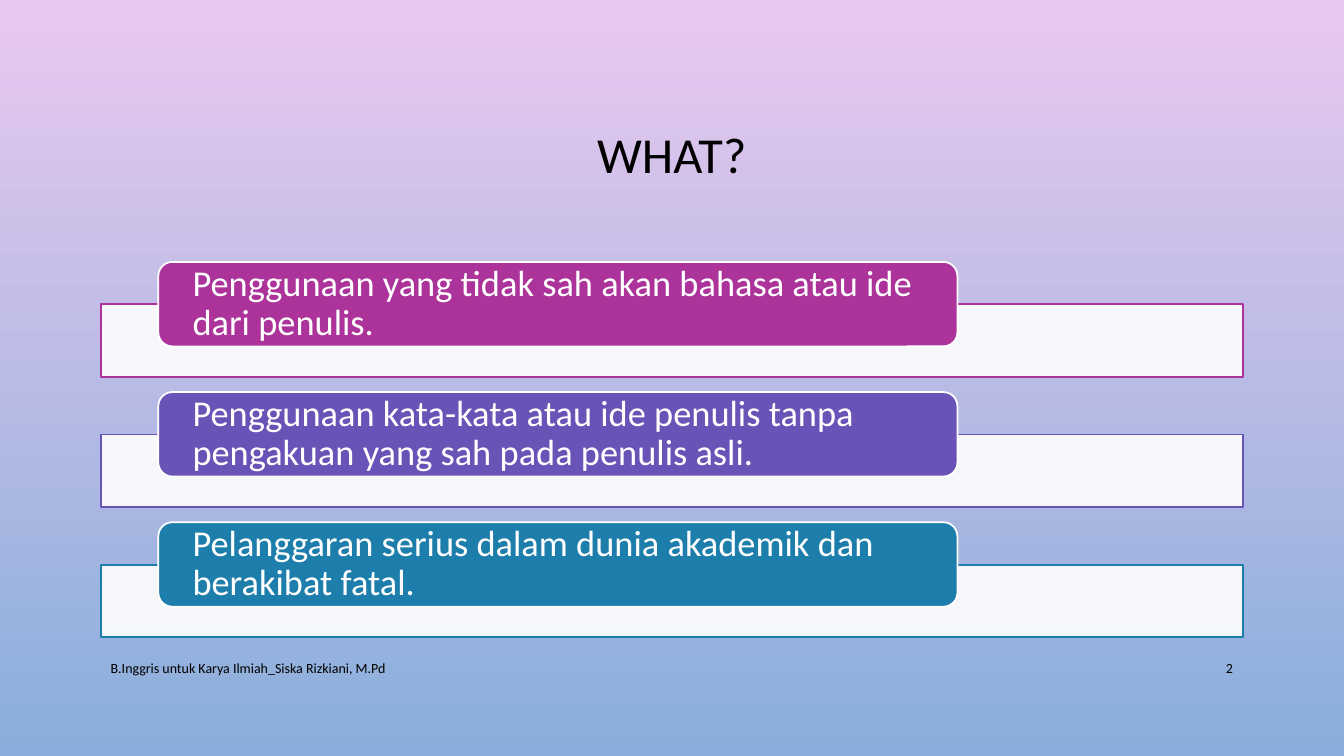
"""Build the WHAT? slide: a title, three labelled bars and a footer."""
from lxml import etree
from pptx import Presentation
from pptx.dml.color import RGBColor
from pptx.enum import shapes, text
from pptx.oxml import ns
from pptx.util import Cm, Pt

TITLE = "WHAT?"
POINTS = [
    ("Penggunaan yang tidak sah akan bahasa atau ide dari penulis.", "AC339A"),
    ("Penggunaan kata-kata atau ide penulis tanpa pengakuan yang sah pada penulis asli.", "6953B7"),
    ("Pelanggaran serius dalam dunia akademik dan berakibat fatal.", "1D7EAB"),
]
FOOTER = "B.Inggris untuk Karya Ilmiah_Siska Rizkiani, M.Pd"
PAGE_NUMBER = "2"

THEME = {
    "font": "Calibri", "ink": "000000", "white": "FFFFFF",
    "sky": ("E9C8EF", "89AEDB"), "bar_opacity": 90,
    "title": 36, "label": 26, "footer": 10, "line": 1.25,
}
MARGIN, CONTENT_WIDTH = 2.54, 28.78
LABEL_LEFT, LABEL_TOP, LABEL_WIDTH, LABEL_HEIGHT = 3.99, 6.6, 20.14, 2.13
BAR_DROP, BAR_HEIGHT, PITCH = 1.07, 1.83, 3.28
FOOTER_TOP, FOOTER_HEIGHT = 16.33, 1.02


def write(shape, words, size, color=THEME["ink"], align=text.PP_ALIGN.LEFT,
          spacing=1.0, side=0.25, edge=0.13):
    """Put formatted, vertically centred text into a shape."""
    frame = shape.text_frame
    frame.word_wrap = True
    frame.vertical_anchor = text.MSO_ANCHOR.MIDDLE
    frame.margin_left = frame.margin_right = Cm(side)
    frame.margin_top = frame.margin_bottom = Cm(edge)
    para = frame.paragraphs[0]
    para.alignment, para.line_spacing = align, spacing
    span = para.add_run()
    span.text = words
    span.font.name, span.font.size = THEME["font"], Pt(size)
    span.font.color.rgb = RGBColor.from_string(color)


def add_text(page, place, words, size, **style):
    """Add a text box at a place given in centimetres."""
    write(page.shapes.add_textbox(*map(Cm, place)), words, size, **style)


def add_block(page, kind, place, fill, line, opacity=100):
    """Add a filled, outlined shape and return it."""
    shape = page.shapes.add_shape(kind, *map(Cm, place))
    shape.shadow.inherit = False
    shape.fill.solid()
    shape.fill.fore_color.rgb = RGBColor.from_string(fill)
    shape.line.color.rgb = RGBColor.from_string(line)
    shape.line.width = Pt(THEME["line"])
    if opacity < 100:
        color = shape.fill._xPr.find(ns.qn("a:solidFill"))[0]
        etree.SubElement(color, ns.qn("a:alpha"), val=str(opacity * 1000))
    return shape


def main():
    """Build and save the deck."""
    deck = Presentation()
    deck.slide_width, deck.slide_height = Cm(33.87), Cm(19.05)
    page = deck.slides.add_slide(deck.slide_layouts[6])

    sky = page.background.fill
    sky.gradient()
    sky.gradient_angle = 270
    for stop, color in zip(sky.gradient_stops, THEME["sky"]):
        stop.color.rgb = RGBColor.from_string(color)

    add_text(page, (MARGIN, 1.73, CONTENT_WIDTH, 4.45), TITLE, THEME["title"],
             align=text.PP_ALIGN.CENTER, spacing=0.9)

    for row, (words, color) in enumerate(POINTS):
        top = LABEL_TOP + row * PITCH
        add_block(page, shapes.MSO_SHAPE.RECTANGLE,
                  (MARGIN, top + BAR_DROP, CONTENT_WIDTH, BAR_HEIGHT),
                  THEME["white"], color, THEME["bar_opacity"])
        label = add_block(page, shapes.MSO_SHAPE.ROUNDED_RECTANGLE,
                          (LABEL_LEFT, top, LABEL_WIDTH, LABEL_HEIGHT),
                          color, THEME["white"])
        write(label, words, THEME["label"], color=THEME["white"],
              spacing=0.9, side=0.76, edge=0)

    add_text(page, (MARGIN, FOOTER_TOP, 18.54, FOOTER_HEIGHT), FOOTER, THEME["footer"])
    add_text(page, (29.2, FOOTER_TOP, 2.12, FOOTER_HEIGHT), PAGE_NUMBER,
             THEME["footer"], align=text.PP_ALIGN.RIGHT)
    deck.save("out.pptx")


if __name__ == "__main__":
    main()
